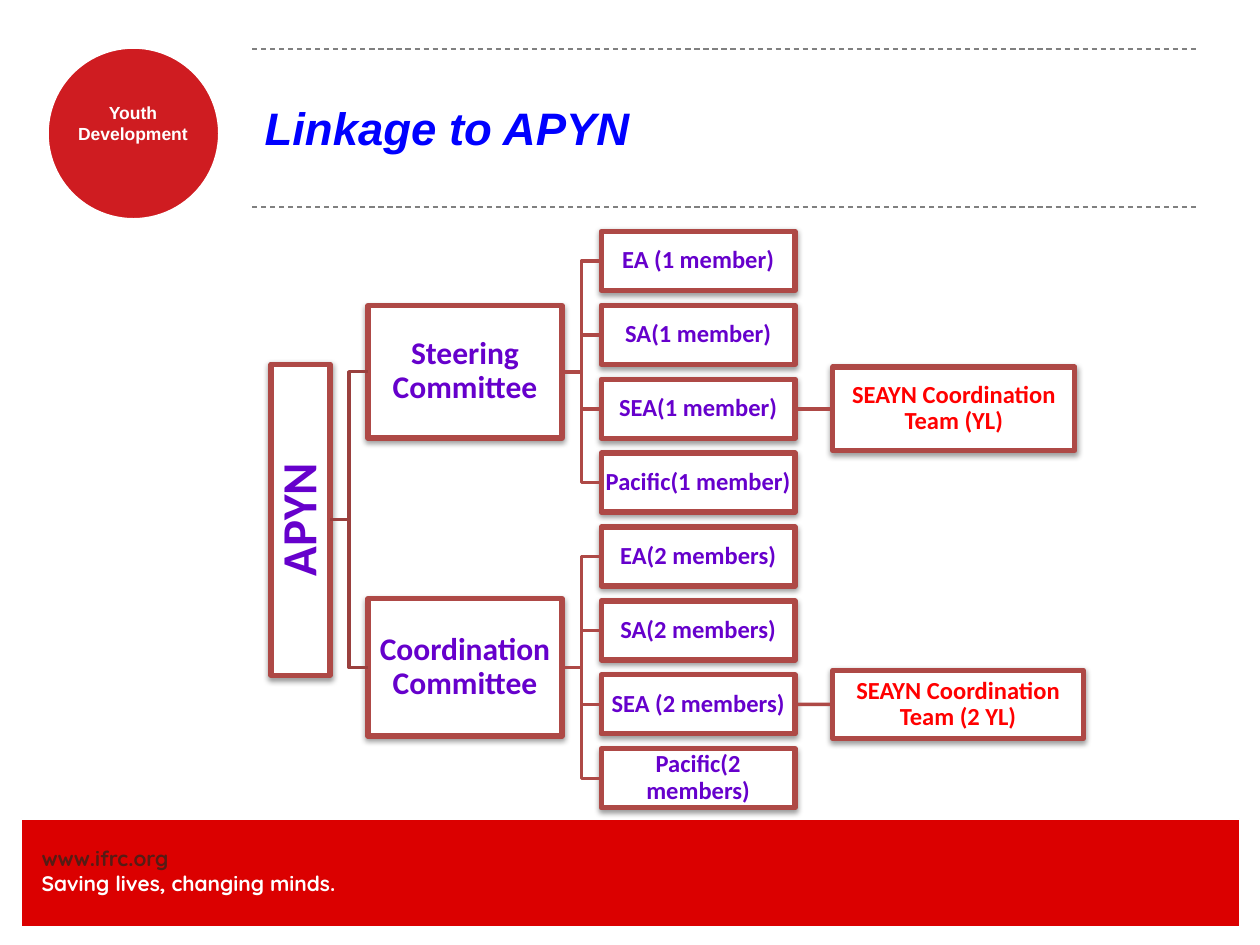
from lxml.etree import SubElement
from pptx import Presentation
from pptx.dml.color import RGBColor
from pptx.enum.dml import MSO_LINE
from pptx.enum.shapes import MSO_CONNECTOR, MSO_SHAPE
from pptx.enum.text import MSO_ANCHOR, MSO_AUTO_SIZE, PP_ALIGN
from pptx.oxml import parse_xml
from pptx.oxml.ns import nsdecls, qn
from pptx.util import Cm, Pt

WHITE = RGBColor(0xFF, 0xFF, 0xFF)
BAND_RED = RGBColor(0xDB, 0x00, 0x00)
BADGE_RED = RGBColor(0xCF, 0x1C, 0x21)
BOX_RED = RGBColor(0xAE, 0x49, 0x46)
TRUNK_RED = RGBColor(0x9A, 0x40, 0x3E)
GREY = RGBColor(0x80, 0x80, 0x80)
BROWN = RGBColor(0x55, 0x1C, 0x15)
BLUE = RGBColor(0x00, 0x00, 0xFF)
PURPLE = RGBColor(0x66, 0x00, 0xCC)
RED = RGBColor(0xFF, 0x00, 0x00)

TOP, LEFT, BOTTOM, RIGHT = range(4)

SHADOW = (
    f'<a:effectLst {nsdecls("a")}>'
    '<a:outerShdw blurRad="40000" dist="20000" dir="5400000" rotWithShape="0">'
    '<a:srgbClr val="000000"><a:alpha val="38000"/></a:srgbClr>'
    '</a:outerShdw></a:effectLst>'
)


def write(tf, text, *, size, font="Calibri", colors=(PURPLE,), align=PP_ALIGN.CENTER,
          anchor=MSO_ANCHOR.MIDDLE, inset=None, spacing=None, italic=False):
    """Fill a text frame, one paragraph and one colour for each line of text."""
    tf.word_wrap = True
    tf.auto_size = MSO_AUTO_SIZE.NONE
    tf.vertical_anchor = anchor
    if inset is not None:
        tf.margin_left = tf.margin_right = tf.margin_top = tf.margin_bottom = Cm(inset)
    for i, (line, color) in enumerate(zip(text.split("\n"), colors)):
        p = tf.paragraphs[0] if i == 0 else tf.add_paragraph()
        p.alignment = align
        p.line_spacing = spacing
        r = p.add_run()
        r.text = line
        r.font.name, r.font.size = font, Pt(size)
        r.font.bold, r.font.italic = True, italic
        r.font.color.rgb = color


class SlideBuilder:
    def __init__(self, s):
        self.s = s

    def title(self, text, x, y, w, h, **fmt):
        sp = self.s.shapes.title
        sp.left, sp.top, sp.width, sp.height = Cm(x), Cm(y), Cm(w), Cm(h)
        write(sp.text_frame, text, **fmt)

    def text(self, text, x, y, w, h, **fmt):
        sp = self.s.shapes.add_textbox(Cm(x), Cm(y), Cm(w), Cm(h))
        write(sp.text_frame, text, inset=0, anchor=MSO_ANCHOR.TOP, **fmt)

    def shape(self, kind, x, y, w, h, fill, line, weight):
        sp = self.s.shapes.add_shape(kind, Cm(x), Cm(y), Cm(w), Cm(h))
        sp.shadow.inherit = False
        sp.fill.solid()
        sp.fill.fore_color.rgb = fill
        sp.line.color.rgb, sp.line.width = line, Pt(weight)
        return sp

    def box(self, text, x, cy, w, h, size=14, color=PURPLE, rotation=0):
        """Chart box, placed by its left edge and vertical centre."""
        sp = self.shape(MSO_SHAPE.RECTANGLE, x, cy - h / 2, w, h, WHITE, BOX_RED, 3)
        sp.rotation = rotation
        pr = sp._element.spPr
        pr.replace(pr.find(qn("a:effectLst")), parse_xml(SHADOW))
        write(sp.text_frame, text, size=size, colors=(color,), inset=0.03, spacing=0.9)
        return sp

    def line(self, x1, y1, x2, y2, color, weight, kind=MSO_CONNECTOR.STRAIGHT):
        c = self.s.shapes.add_connector(kind, Cm(x1), Cm(y1), Cm(x2), Cm(y2))
        c.line.color.rgb, c.line.width = color, Pt(weight)
        SubElement(c._element.spPr, qn("a:effectLst"))
        return c

    def link(self, a, b, color=BOX_RED, kind=MSO_CONNECTOR.ELBOW, side=RIGHT):
        c = self.line(0, 0, 1, 1, color, 2, kind)
        c.begin_connect(a, side)
        c.end_connect(b, LEFT)
        return c


def main():
    prs = Presentation()
    prs.slide_width, prs.slide_height = Cm(25.4), Cm(19.05)
    b = SlideBuilder(prs.slides.add_slide(prs.slide_layouts[5]))

    # Footer band
    b.shape(MSO_SHAPE.RECTANGLE, 0.43, 16.51, 24.56, 2.18, BAND_RED, WHITE, 0.75)
    b.text("www.ifrc.org\nSaving lives, changing minds.", 0.84, 17.04, 8.69, 1.02,
           size=12, font="Quicksand", colors=(BROWN, WHITE), align=PP_ALIGN.LEFT)

    # Round badge
    b.shape(MSO_SHAPE.OVAL, 0.94, 0.94, 3.5, 3.5, BADGE_RED, WHITE, 2.5)
    b.text("Youth Development", 1.09, 2.06, 3.18, 0.86,
           size=10, font="Arial", colors=(WHITE,))

    # Title between dashed rules
    for y in (0.99, 4.17):
        b.line(5.08, y, 24.13, y, GREY, 0.75).line.dash_style = MSO_LINE.DASH
    b.title("Linkage to APYN", 5.08, 0.97, 19.05, 3.18, size=26, font="Arial",
            colors=(BLUE,), align=PP_ALIGN.LEFT, italic=True)

    # Organisation chart: members on an even pitch, each parent centred on its children
    first, pitch, bar, width = 5.26, 1.49, 1.19, 3.91
    committees = [
        ("Steering Committee", 2.67,
         ["EA (1 member)", "SA(1 member)", "SEA(1 member)", "Pacific(1 member)"],
         "SEAYN Coordination Team (YL)", 4.88, 1.68),
        ("Coordination Committee", 2.77,
         ["EA(2 members)", "SA(2 members)", "SEA (2 members)", "Pacific(2 members)"],
         "SEAYN Coordination Team (2 YL)", 5.05, 1.37),
    ]
    root_x, root_len = 6.06, 6.27
    root = b.box("APYN", root_x - root_len / 2, first + 3.5 * pitch, root_len, bar,
                 size=28, rotation=270)
    for i, (name, height, members, team, team_w, team_h) in enumerate(committees):
        top = first + 4 * i * pitch
        committee = b.box(name, 7.42, top + 1.5 * pitch, width, height, size=18)
        # The root is turned, so its bottom side faces right
        trunk = b.link(root, committee, TRUNK_RED, side=BOTTOM)
        trunk.begin_x, trunk.begin_y = Cm(root_x + bar / 2), Cm(first + 3.5 * pitch)
        for j, member in enumerate(members):
            cy = top + j * pitch
            sp = b.box(member, 12.12, cy, width, bar)
            b.link(committee, sp)
            if member.startswith("SEA"):
                team_box = b.box(team, 16.79, cy, team_w, team_h, color=RED)
                b.link(sp, team_box, kind=MSO_CONNECTOR.STRAIGHT)

    prs.save("out.pptx")


if __name__ == "__main__":
    main()
